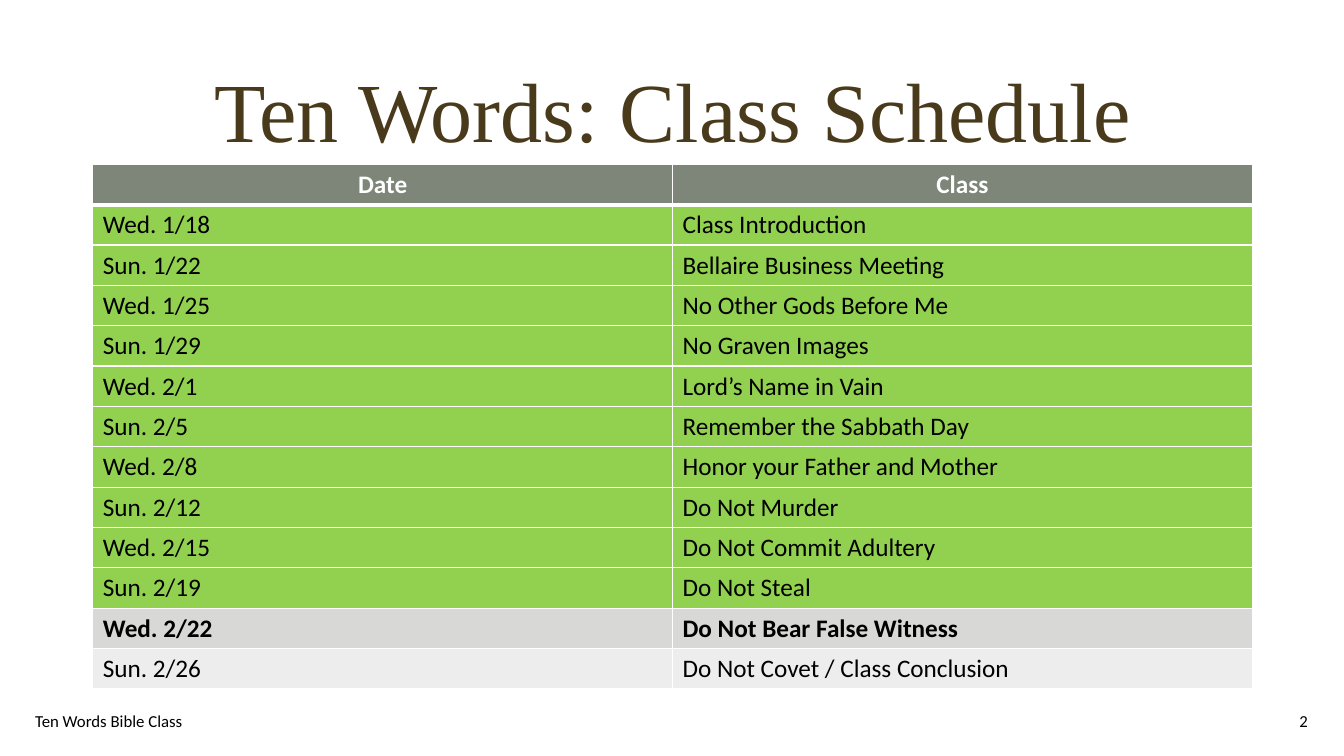
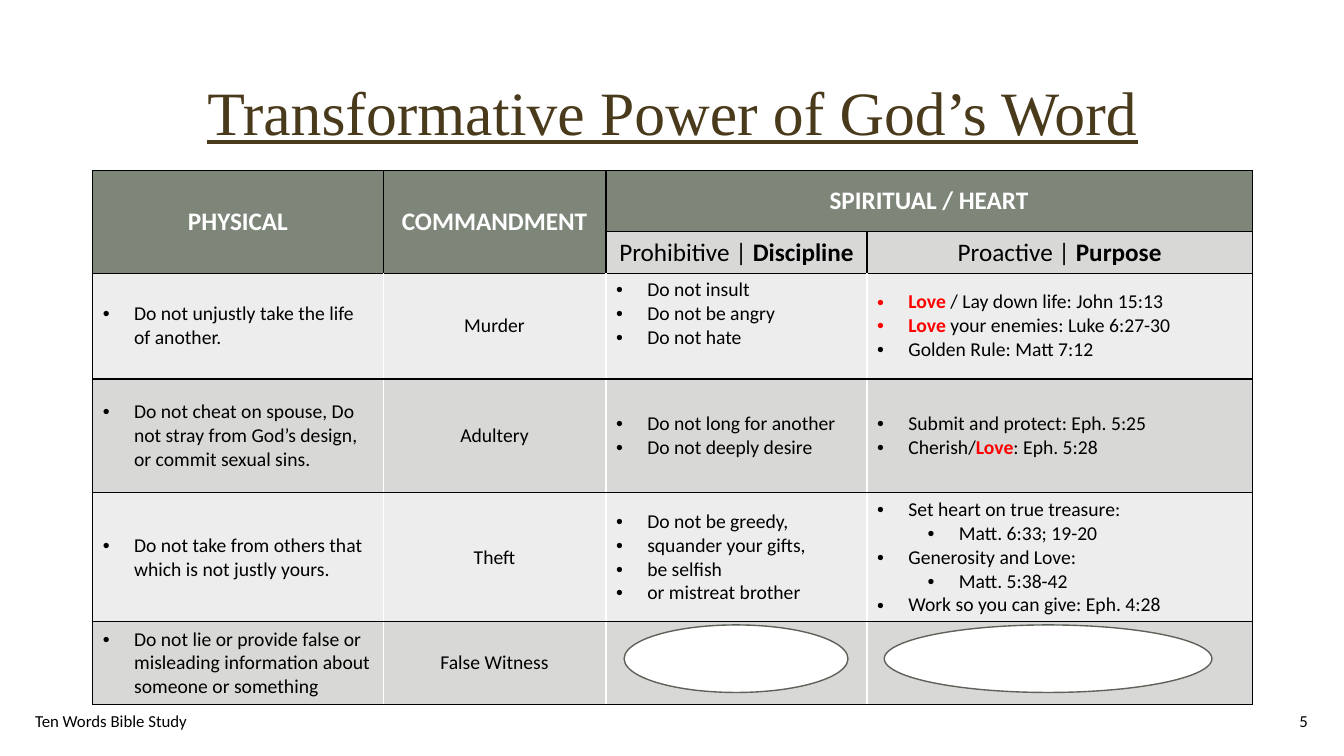
from pptx import Presentation
from pptx.dml.color import RGBColor
from pptx.enum.shapes import MSO_SHAPE
from pptx.enum.text import MSO_ANCHOR, MSO_AUTO_SIZE, PP_ALIGN
from pptx.oxml.ns import qn
from pptx.util import Inches, Pt
from lxml.etree import SubElement, Element

WHITE, BLACK, RED, BROWN = "FFFFFF", "000000", "FF0000", "4A3A1C"
HEADER, BAND, LIGHT, DONE, OUTLINE = "7E8679", "D8D9D7", "ECEDEC", "92D050", "5D635A"
TITLE_FONT, BODY_FONT = "Times New Roman", "Calibri"
TITLE_ONLY = 5
LEFT, WIDTH = 0.92, 11.5
CENTER = PP_ALIGN.CENTER

LOVE = ("Love", RED, True)

SCHEDULE = [
    ("Wed. 1/18", "Class Introduction"),
    ("Sun. 1/22", "Bellaire Business Meeting"),
    ("Wed. 1/25", "No Other Gods Before Me"),
    ("Sun. 1/29", "No Graven Images"),
    ("Wed. 2/1", "Lord’s Name in Vain"),
    ("Sun. 2/5", "Remember the Sabbath Day"),
    ("Wed. 2/8", "Honor your Father and Mother"),
    ("Sun. 2/12", "Do Not Murder"),
    ("Wed. 2/15", "Do Not Commit Adultery"),
    ("Sun. 2/19", "Do Not Steal"),
    ("Wed. 2/22", "Do Not Bear False Witness"),
    ("Sun. 2/26", "Do Not Covet / Class Conclusion"),
]
CURRENT = 11  # table row of the present class

# Physical, commandment, prohibitive list, proactive list of (level, runs)
COMMANDMENTS = [
    ("Do not unjustly take the life of another.", "Murder",
     ["Do not insult", "Do not be angry", "Do not hate"],
     [(0, [LOVE, " / Lay down life: John 15:13"]),
      (0, [LOVE, " your enemies: Luke 6:27-30"]),
      (0, ["Golden Rule: Matt 7:12"])]),
    ("Do not cheat on spouse, Do not stray from God’s design, or commit sexual sins.",
     "Adultery",
     ["Do not long for another", "Do not deeply desire"],
     [(0, ["Submit and protect: Eph. 5:25"]),
      (0, ["Cherish/", LOVE, ": Eph. 5:28"])]),
    ("Do not take from others that which is not justly yours.", "Theft",
     ["Do not be greedy,", "squander your gifts,", "be selfish", "or mistreat brother"],
     [(0, ["Set heart on true treasure:"]),
      (1, ["Matt. 6:33; 19-20"]),
      (0, ["Generosity and Love:"]),
      (1, ["Matt. 5:38-42"]),
      (0, ["Work so you can give: Eph. 4:28"])]),
    ("Do not lie or provide false or misleading information about someone or something",
     "False Witness", [], []),
]


def rgb(hex_color):
    return RGBColor.from_string(hex_color)


def box(left, top, width, height):
    return [Inches(v) for v in (left, top, width, height)]


def add_run(p, text, size, color=BLACK, bold=False, font=BODY_FONT):
    r = p.add_run()
    r.text = text
    r.font.size = Pt(size)
    r.font.name = font
    r.font.bold = bold
    r.font.color.rgb = rgb(color)
    return r


def set_bullet(p, level):
    p.level = level
    pPr = p._p.get_or_add_pPr()
    pPr.set("marL", str(Inches(0.31 + 0.5 * level)))
    pPr.set("indent", str(Inches(-0.31)))
    SubElement(pPr, qn("a:buFont"), typeface="Arial")
    SubElement(pPr, qn("a:buChar"), char="•")


def write_list(cell, items, size=14):
    """Fill a cell with bulleted (level, runs) items; a run is text or (text, colour, bold)."""
    tf = cell.text_frame
    for i, (level, runs) in enumerate(items):
        p = tf.paragraphs[0] if i == 0 else tf.add_paragraph()
        set_bullet(p, level)
        for run in runs:
            text, *style = (run,) if isinstance(run, str) else run
            add_run(p, text, size, *style)


def write_line(cell, text, size=18, color=BLACK, bold=False, align=None):
    p = cell.text_frame.paragraphs[0]
    p.alignment = align
    add_run(p, text, size, color, bold)


def style_cell(cell, fill, borders):
    """Set the fill and the (colour, points) borders, in the order left, right, top, bottom."""
    cell.fill.solid()
    cell.fill.fore_color.rgb = rgb(fill)
    tcPr = cell._tc.get_or_add_tcPr()
    for i, (side, (color, points)) in enumerate(zip("LRTB", borders)):
        ln = Element(qn(f"a:ln{side}"), w=str(Pt(points)))
        SubElement(SubElement(ln, qn("a:solidFill")), qn("a:srgbClr"), val=color)
        tcPr.insert(i, ln)


def add_grid(slide, top, col_widths, row_heights):
    frame = slide.shapes.add_table(
        len(row_heights), len(col_widths),
        *box(LEFT, top, sum(col_widths), sum(row_heights)))
    table = frame.table
    table.first_row = table.horz_banding = False
    for col, width in zip(table.columns, col_widths):
        col.width = Inches(width)
    for row, height in zip(table.rows, row_heights):
        row.height = Inches(height)
    return table


def add_footer_text(slide, left, width, text, align):
    tf = slide.shapes.add_textbox(*box(left, 6.95, width, 0.4)).text_frame
    tf.word_wrap = True
    tf.vertical_anchor = MSO_ANCHOR.MIDDLE
    p = tf.paragraphs[0]
    p.alignment = align
    add_run(p, text, 12)


def add_titled_slide(prs, title, size, footer, number, underline=False):
    slide = prs.slides.add_slide(prs.slide_layouts[TITLE_ONLY])
    sp = slide.shapes.title
    sp.left, sp.top, sp.width, sp.height = box(LEFT, 0.42, WIDTH, 1.45)
    tf = sp.text_frame
    tf.word_wrap = True
    tf.auto_size = MSO_AUTO_SIZE.NONE
    tf.vertical_anchor = MSO_ANCHOR.MIDDLE
    p = tf.paragraphs[0]
    p.alignment = CENTER
    p.line_spacing = 0.9
    r = add_run(p, title, size, BROWN, font=TITLE_FONT)
    r.font.underline = underline
    add_footer_text(slide, 0.25, 4.5, footer, PP_ALIGN.LEFT)
    add_footer_text(slide, 10.07, 3, str(number), PP_ALIGN.RIGHT)
    return slide


def add_schedule(slide, top):
    rows = [("Date", "Class")] + SCHEDULE
    table = add_grid(slide, top, [WIDTH / 2] * 2, [0.4] * len(rows))
    thin, thick = (WHITE, 1), (WHITE, 3)
    for i, texts in enumerate(rows):
        head = i == 0
        if head:
            fill = HEADER
        elif i < CURRENT:
            fill = DONE
        else:
            fill = BAND if i == CURRENT else LIGHT
        borders = [thin, thin, thick if i == 1 else thin, thick if head else thin]
        for cell, text in zip(table.rows[i].cells, texts):
            style_cell(cell, fill, borders)
            write_line(cell, text, color=WHITE if head else BLACK,
                       bold=head or i == CURRENT, align=CENTER if head else None)


def add_commandment_header(table):
    for c, text in enumerate(["PHYSICAL", "COMMANDMENT", "SPIRITUAL / HEART"]):
        write_line(table.cell(0, c), text, color=WHITE, bold=True, align=CENTER)
    for c, (kind, aim) in enumerate([("Prohibitive", "Discipline"),
                                     ("Proactive", "Purpose")], start=2):
        cell = table.cell(1, c)
        write_line(cell, f"{kind} | ", align=CENTER)
        add_run(cell.text_frame.paragraphs[0], aim, 18, bold=True)
    for c in (0, 1):
        table.cell(0, c).merge(table.cell(1, c))
    table.cell(0, 2).merge(table.cell(0, 3))


def add_commandments(slide, top):
    table = add_grid(slide, top, [2.88, 2.21, 2.59, 3.82],
                     [0.61, 0.41, 1.05, 1.13, 1.28, 0.82])
    black, white = (BLACK, 1), (WHITE, 1)
    last = len(table.columns) - 1
    for i, row in enumerate(table.rows):
        for c, cell in enumerate(row.cells):
            head = i < 2
            if i == 0 or (i == 1 and c < 2):
                fill = HEADER
            else:
                fill = BAND if i % 2 else LIGHT
            style_cell(cell, fill, [black if head or c == 0 else white,
                                    black if head or c == last else white,
                                    black, black])
            cell.vertical_anchor = MSO_ANCHOR.MIDDLE
    add_commandment_header(table)
    for i, (physical, name, prohibitive, proactive) in enumerate(COMMANDMENTS, start=2):
        write_list(table.cell(i, 0), [(0, [physical])])
        write_line(table.cell(i, 1), name, size=14, align=CENTER)
        write_list(table.cell(i, 2), [(0, [text]) for text in prohibitive])
        write_list(table.cell(i, 3), proactive)
    table.cell(2, 2).margin_bottom = Inches(0.29)


def add_cover(slide, left, width):
    """White ellipse over an answer still to be given."""
    sp = slide.shapes.add_shape(MSO_SHAPE.OVAL, *box(left, 6.2, width, 0.67))
    sp.shadow.inherit = False
    sp.fill.solid()
    sp.fill.fore_color.rgb = rgb(WHITE)
    sp.line.color.rgb = rgb(OUTLINE)
    sp.line.width = Pt(1)


def main():
    prs = Presentation()
    prs.slide_width, prs.slide_height = Inches(13.33), Inches(7.5)

    slide = add_titled_slide(prs, "Ten Words: Class Schedule", 60,
                             "Ten Words Bible Class", 2)
    add_schedule(slide, 1.63)

    slide = add_titled_slide(prs, "Transformative Power of God’s Word", 44,
                             "Ten Words Bible Study", 5, underline=True)
    add_commandments(slide, 1.69)
    for left, width in ((6.19, 2.22), (8.77, 3.25)):
        add_cover(slide, left, width)

    prs.save("out.pptx")


if __name__ == "__main__":
    main()
